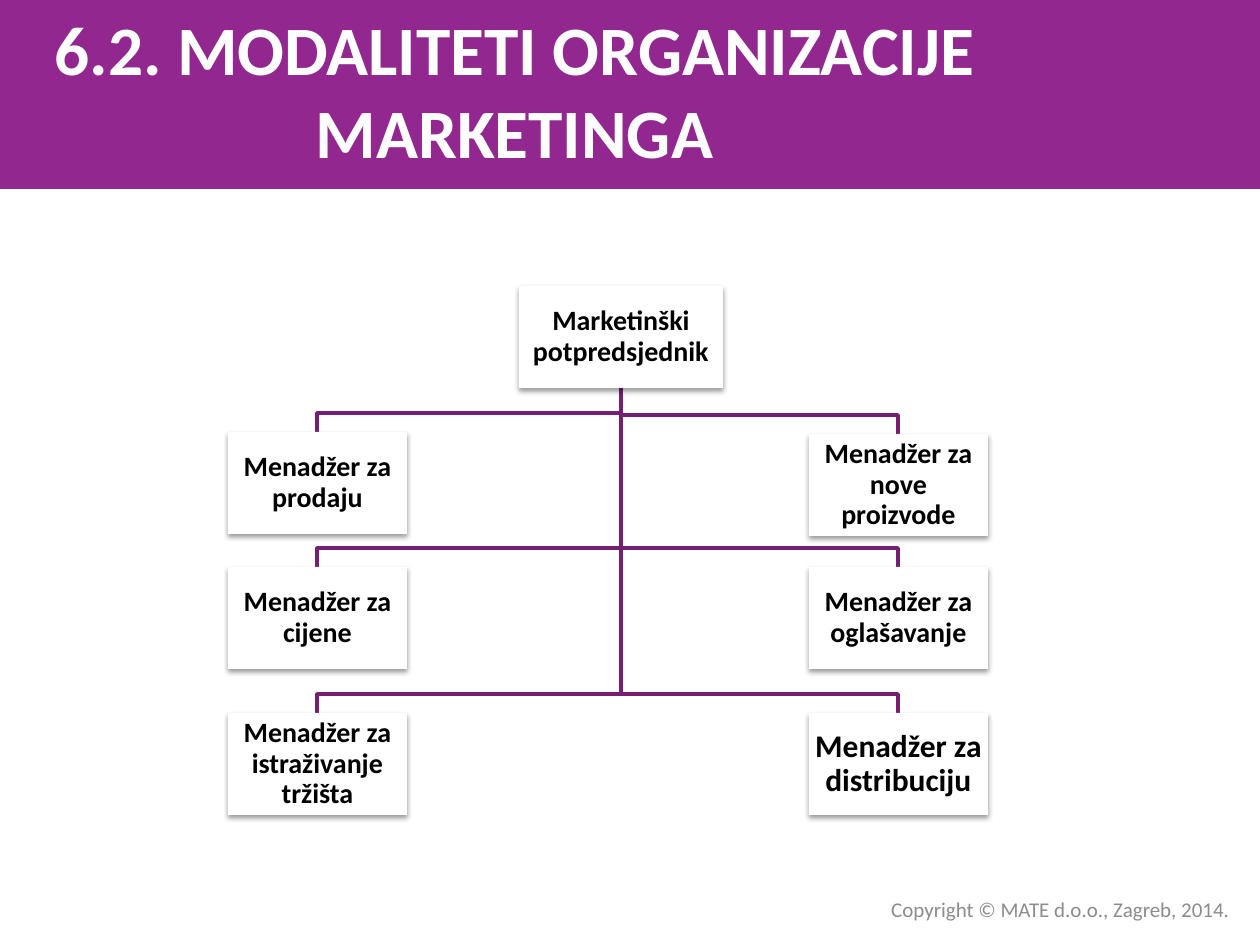
from lxml.etree import SubElement
from pptx import Presentation
from pptx.dml.color import RGBColor
from pptx.enum.shapes import MSO_SHAPE
from pptx.enum.text import MSO_ANCHOR, PP_ALIGN
from pptx.oxml.ns import qn
from pptx.util import Emu, Pt

EMU_PER_PX = 914400 / 126
PURPLE = RGBColor(0x92, 0x27, 0x8F)
DARK_PURPLE = RGBColor(0x75, 0x1F, 0x73)
WHITE = RGBColor(0xFF, 0xFF, 0xFF)
BLACK = RGBColor(0, 0, 0)
GREY = RGBColor(0x8C, 0x8C, 0x8C)


def px(length):
    return Emu(round(length * EMU_PER_PX))


class OrgChartSlide:
    """Draws bands, boxes, branches and text on one slide in a shared style."""

    font_name = "Calibri"

    def __init__(self, slide):
        self.slide = slide

    def rectangle(self, left, top, width, height, color):
        rectangle = self.slide.shapes.add_shape(
            MSO_SHAPE.RECTANGLE, px(left), px(top), px(width), px(height))
        rectangle.shadow.inherit = False
        rectangle.fill.solid()
        rectangle.fill.fore_color.rgb = color
        rectangle.line.fill.background()
        return rectangle

    def fill_text(self, frame, text, size, color, bold, align):
        frame.word_wrap = True
        frame.vertical_anchor = MSO_ANCHOR.MIDDLE
        paragraph = frame.paragraphs[0]
        paragraph.alignment = align
        run = paragraph.add_run()
        run.text = text
        run.font.name = self.font_name
        run.font.size = Pt(size)
        run.font.bold = bold
        run.font.color.rgb = color
        return paragraph

    def text(self, left, top, width, height, text, size, color, bold, align):
        box = self.slide.shapes.add_textbox(px(left), px(top), px(width), px(height))
        self.fill_text(box.text_frame, text, size, color, bold, align)

    def role(self, left, top, width, height, title, size=16):
        card = self.rectangle(left, top, width, height, WHITE)
        effects = card._element.spPr.find(qn("a:effectLst"))
        shadow = SubElement(effects, qn("a:outerShdw"), blurRad=str(Pt(3.1)),
                            dist=str(Pt(1.6)), dir="5400000", rotWithShape="0")
        tint = SubElement(shadow, qn("a:srgbClr"), val=str(BLACK))
        SubElement(tint, qn("a:alpha"), val="38000")
        frame = card.text_frame
        frame.margin_left = frame.margin_right = px(1)
        frame.margin_top = frame.margin_bottom = px(1)
        self.fill_text(frame, title, size, BLACK, True, PP_ALIGN.CENTER).line_spacing = 0.9

    def branch(self, start_x, start_y, end_x, end_y, drop):
        builder = self.slide.shapes.build_freeform(start_x, start_y, scale=EMU_PER_PX)
        bend_y = end_y - drop
        builder.add_line_segments(
            [(start_x, bend_y), (end_x, bend_y), (end_x, end_y)], close=False)
        branch = builder.convert_to_shape()
        branch.shadow.inherit = False
        branch.fill.background()
        branch.line.color.rgb = DARK_PURPLE
        branch.line.width = Pt(2)


def main():
    presentation = Presentation()
    presentation.slide_width, presentation.slide_height = px(1260), px(945)
    chart = OrgChartSlide(presentation.slides.add_slide(presentation.slide_layouts[6]))

    chart.rectangle(0, 0, 1260, 189, PURPLE)

    head_left, head_top, head_width = 519, 286, 204
    manager_width, role_height, drop = 179, 102, 19
    left_column, right_column = 228, 809
    managers = [
        (left_column, 432, "Menadžer za prodaju", 16),
        (left_column, 567, "Menadžer za cijene", 16),
        (left_column, 713, "Menadžer za istraživanje tržišta", 16),
        (right_column, 434, "Menadžer za nove proizvode", 16),
        (right_column, 567, "Menadžer za oglašavanje", 16),
        (right_column, 713, "Menadžer za distribuciju", 18),
    ]
    for left, top, _, _ in managers:
        chart.branch(head_left + head_width // 2, head_top + role_height,
                     left + manager_width // 2, top, drop)
    chart.role(head_left, head_top, head_width, role_height, "Marketinški potpredsjednik")
    for left, top, title, size in managers:
        chart.role(left, top, manager_width, role_height, title, size)

    chart.text(591, 890, 651, 38, "Copyright © MATE d.o.o., Zagreb, 2014.",
               12, GREY, False, PP_ALIGN.RIGHT)
    chart.text(0, 10, 1029, 158, "6.2. MODALITETI ORGANIZACIJE MARKETINGA",
               39.6, WHITE, True, PP_ALIGN.CENTER)
    presentation.save("out.pptx")


if __name__ == "__main__":
    main()
